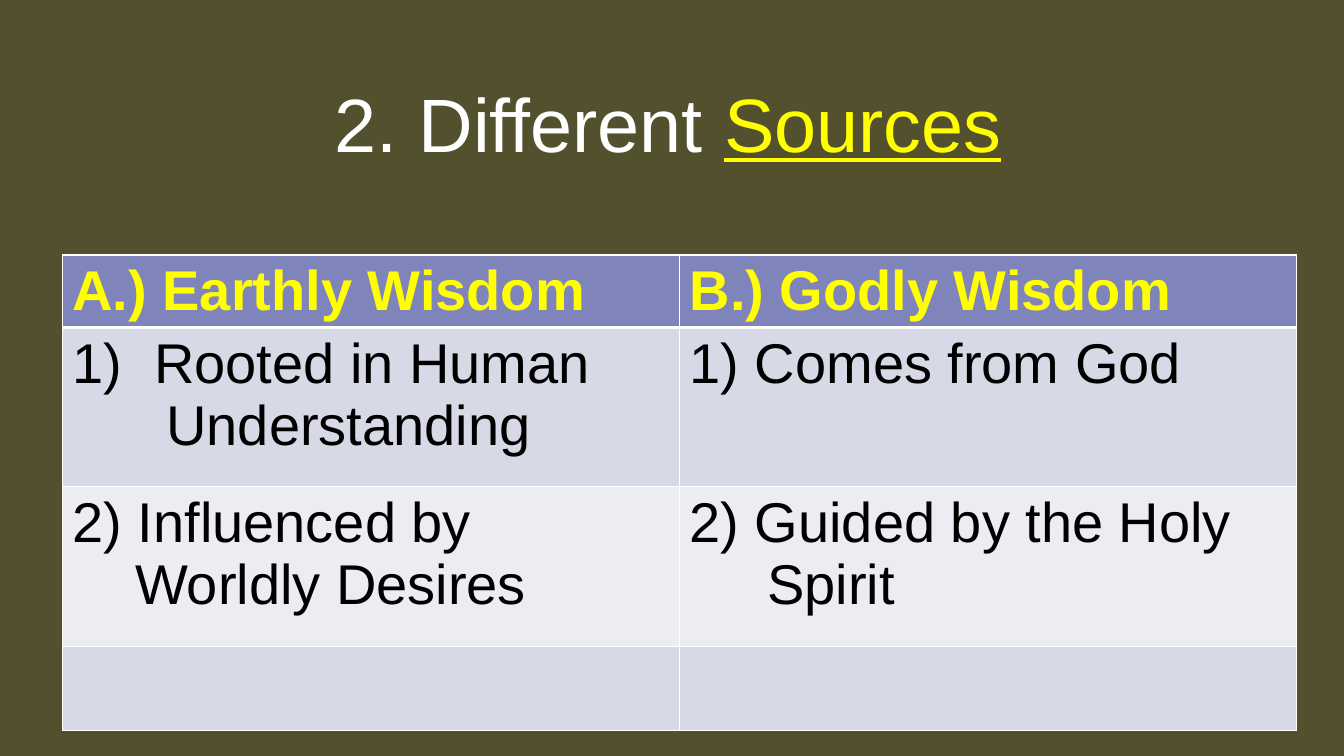
import pptx
import pptx.util
import pptx.dml.color
import pptx.enum.text
import pptx.oxml.ns
import lxml.etree

Inches, Pt = pptx.util.Inches, pptx.util.Pt
qn = pptx.oxml.ns.qn

# Content: each cell lists (text, left margin, first-line indent, numbering)
TITLE = [("2. Different ", "white", False), ("Sources", "yellow", True)]
ROWS = [
    [[("A.) Earthly Wisdom", 0, 0, None)],
     [("B.) Godly Wisdom", 0, 0, None)]],
    [[("Rooted in Human", 0.81, -0.81, "arabicParenR"),
      ("Understanding", 0.93, 0, None)],
     [("1) Comes from God", 0, 0, None)]],
    [[("2) Influenced by", 0, 0, None),
      ("Worldly Desires", 0.62, 0, None)],
     [("2) Guided by the Holy", 0, 0, None),
      ("Spirit", 0.77, 0, None)]],
    [[], []],
]
HEIGHTS = [0.61, 1.58, 1.58, 0.84]
WIDTH = 6.12
FONT = "Arial"
COLORS = {"back": "53502E", "white": "FFFFFF", "yellow": "FFFF00",
          "black": "000000", "head": "7F84BA", "odd": "D8D9E7",
          "even": "ECEDF3"}


def color(name):
    return pptx.dml.color.RGBColor.from_string(COLORS[name])


def style(font, size, name, bold=False):
    font.name, font.size, font.bold = FONT, Pt(size), bold
    font.color.rgb = color(name)


def border(cell, side, points):
    props = cell._tc.get_or_add_tcPr()
    line = lxml.etree.SubElement(props, qn("a:ln" + side), w=str(Pt(points)))
    fill = lxml.etree.SubElement(line, qn("a:solidFill"))
    lxml.etree.SubElement(fill, qn("a:srgbClr"), val=COLORS["white"])


def indent(para, left, first, number):
    props = para._p.get_or_add_pPr()
    props.set("marL", str(Inches(left)))
    props.set("indent", str(Inches(first)))
    if number:
        mark = lxml.etree.Element(qn("a:buAutoNum"), type=number)
        props.insert(0, mark)


# Slide and background
deck = pptx.Presentation()
deck.slide_width, deck.slide_height = Inches(13.33), Inches(7.5)
slide = deck.slides.add_slide(deck.slide_layouts[5])
slide.background.fill.solid()
slide.background.fill.fore_color.rgb = color("back")

# Title
title = slide.shapes.title
title.left, title.top = Inches(0.38), Inches(0.68)
title.width, title.height = Inches(12.49), Inches(1.62)
frame = title.text_frame
frame.margin_left = frame.margin_right = frame.margin_bottom = 0
frame.margin_top = Inches(0.08)
frame.word_wrap = True
frame.auto_size = pptx.enum.text.MSO_AUTO_SIZE.NONE
frame.vertical_anchor = pptx.enum.text.MSO_ANCHOR.TOP
para = frame.paragraphs[0]
para.alignment = pptx.enum.text.PP_ALIGN.CENTER
for text, name, under in TITLE:
    run = para.add_run()
    run.text = text
    style(run.font, 54, name)
    run.font.underline = under

# Table
table = slide.shapes.add_table(
    len(ROWS), 2, Inches(0.62), Inches(2.53),
    Inches(2 * WIDTH), Inches(sum(HEIGHTS))).table
for column in table.columns:
    column.width = Inches(WIDTH)
for r, (row, height) in enumerate(zip(ROWS, HEIGHTS)):
    table.rows[r].height = Inches(height)
    band = "head" if r == 0 else "odd" if r % 2 else "even"
    for c, lines in enumerate(row):
        cell = table.cell(r, c)
        for side in "LRTB":
            thick = (r, side) in [(0, "B"), (1, "T")]
            border(cell, side, 3 if thick else 1)
        cell.fill.solid()
        cell.fill.fore_color.rgb = color(band)
        for i, (text, left, first, number) in enumerate(lines):
            frame = cell.text_frame
            para = frame.add_paragraph() if i else frame.paragraphs[0]
            para.text = text
            style(para.font, 40, "black" if r else "yellow", r == 0)
            indent(para, left, first, number)

deck.save("out.pptx")
